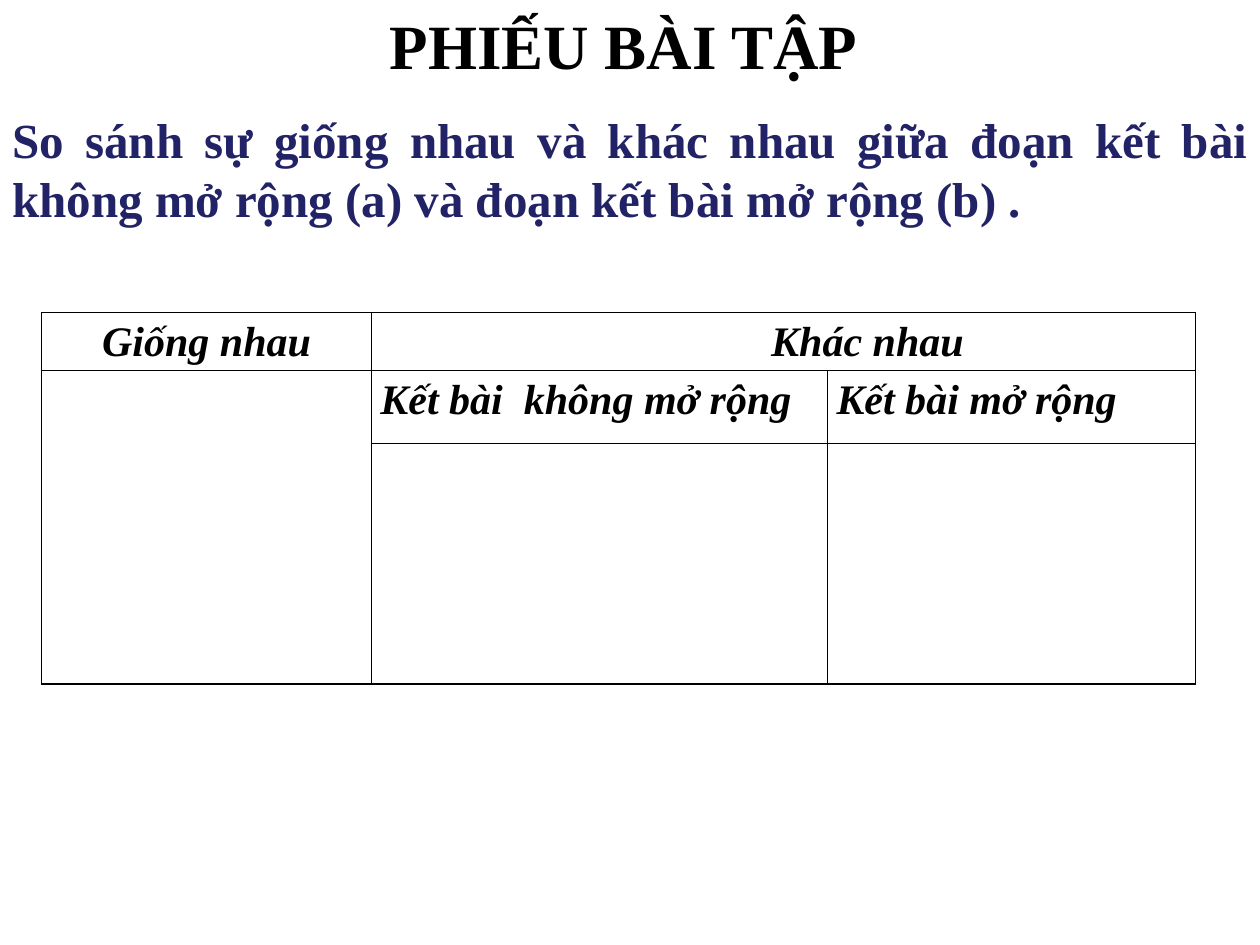
from lxml import etree
from pptx import Presentation
from pptx.dml.color import RGBColor
from pptx.enum.text import MSO_ANCHOR, PP_ALIGN
from pptx.oxml.ns import qn
from pptx.util import Inches, Pt

BLACK = RGBColor(0x00, 0x00, 0x00)
NAVY = RGBColor(0x22, 0x22, 0x67)
FONT = "Times New Roman"
LEFT, CENTER, JUSTIFY = PP_ALIGN.LEFT, PP_ALIGN.CENTER, PP_ALIGN.JUSTIFY
TOP = MSO_ANCHOR.TOP
TITLE_ONLY = 5

COLUMN_WIDTHS = (2.62, 3.62, 2.92)
ROW_HEIGHTS = (0.46, 0.58, 1.91)
# Row, column, text, alignment, left margin
HEADINGS = (
    (0, 0, "Giống nhau", CENTER, 0.07),
    (0, 1, "Khác nhau", CENTER, 1.4),
    (1, 1, "Kết bài  không mở rộng", LEFT, 0.07),
    (1, 2, "Kết bài mở rộng", LEFT, 0.07),
)


def write(frame, text, size, color, alignment, italic=False):
    """Put one bold run in the first paragraph of a text frame."""
    frame.word_wrap = True
    paragraph = frame.paragraphs[0]
    paragraph.alignment = alignment
    run = paragraph.add_run()
    run.text = text
    font = run.font
    font.name, font.size, font.bold, font.italic = FONT, Pt(size), True, italic
    font.color.rgb = color
    return paragraph


def add_title(slide, text):
    title = slide.shapes.title
    title.left, title.top = Inches(0), Inches(0)
    title.width, title.height = Inches(10), Inches(0.8)
    title.text_frame.vertical_anchor = TOP
    write(title.text_frame, text, 36, BLACK, CENTER)


def add_instruction(slide, text):
    box = slide.shapes.add_textbox(Inches(0), Inches(0.82), Inches(10), Inches(1.07))
    write(box.text_frame, text, 28, NAVY, JUSTIFY)


def format_cell(cell):
    """Give a cell no fill and a thin black border on each side."""
    cell.fill.background()
    properties = cell._tc.get_or_add_tcPr()
    for index, side in enumerate(("a:lnL", "a:lnR", "a:lnT", "a:lnB")):
        line = etree.Element(qn(side), w=str(Pt(1)))
        fill = etree.SubElement(line, qn("a:solidFill"))
        etree.SubElement(fill, qn("a:srgbClr"), val=str(BLACK))
        properties.insert(index, line)
    cell.margin_left = cell.margin_right = Inches(0.07)
    cell.margin_top = cell.margin_bottom = Inches(0)


def add_comparison_table(slide):
    frame = slide.shapes.add_table(
        len(ROW_HEIGHTS), len(COLUMN_WIDTHS), Inches(0.33), Inches(2.48),
        Inches(sum(COLUMN_WIDTHS)), Inches(sum(ROW_HEIGHTS)))
    table = frame.table
    table.first_row = table.horz_banding = False
    for column, width in zip(table.columns, COLUMN_WIDTHS):
        column.width = Inches(width)
    for row, height in zip(table.rows, ROW_HEIGHTS):
        row.height = Inches(height)
    for cell in table.iter_cells():
        format_cell(cell)

    # Shared heading and the tall answer cell
    table.cell(0, 1).merge(table.cell(0, 2))
    table.cell(1, 0).merge(table.cell(2, 0))

    for row, column, text, alignment, margin in HEADINGS:
        cell = table.cell(row, column)
        cell.margin_left = Inches(margin)
        paragraph = write(cell.text_frame, text, 24, BLACK, alignment, italic=True)
        paragraph.line_spacing = 1.15


def main():
    presentation = Presentation()
    presentation.slide_width, presentation.slide_height = Inches(10), Inches(7.5)
    slide = presentation.slides.add_slide(presentation.slide_layouts[TITLE_ONLY])
    add_comparison_table(slide)
    add_title(slide, "PHIẾU BÀI TẬP ")
    add_instruction(slide, "So sánh sự giống nhau và khác nhau giữa đoạn kết bài "
                           "không mở rộng (a) và đoạn kết bài mở rộng (b) .")
    presentation.save("out.pptx")


if __name__ == "__main__":
    main()
